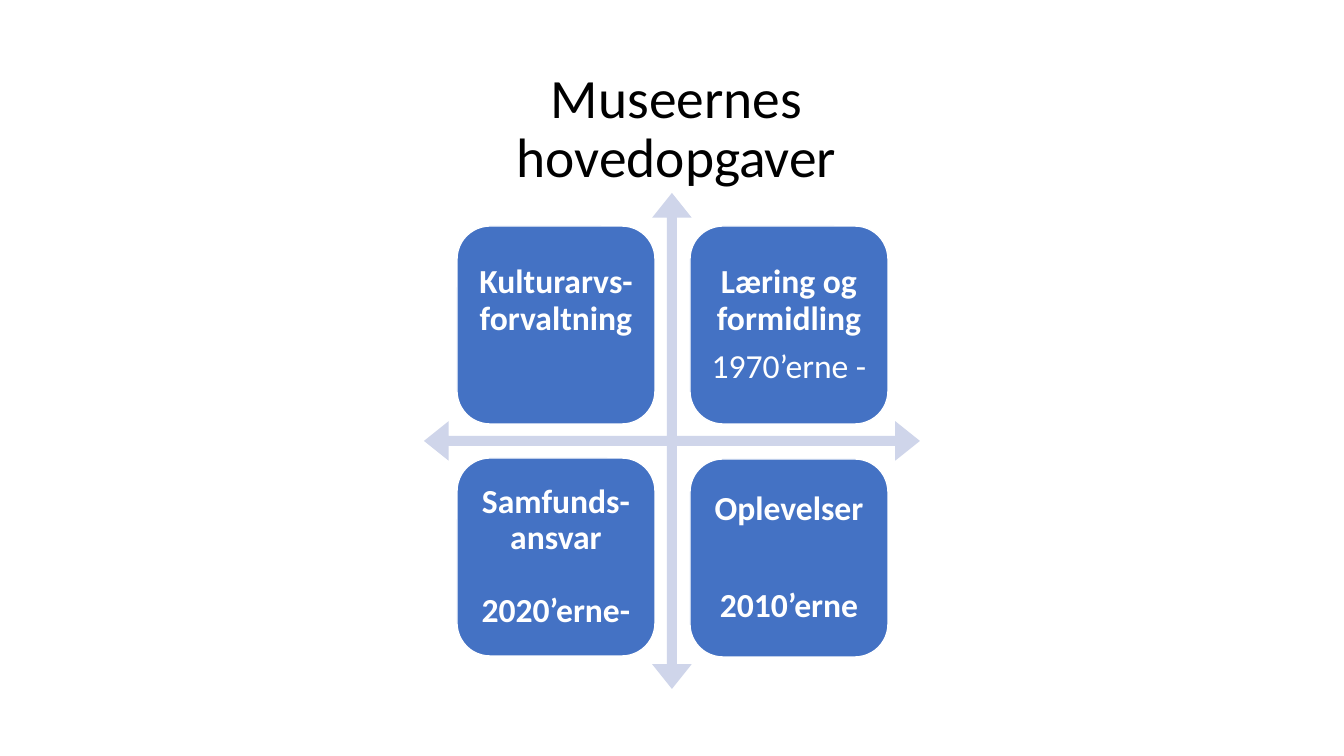
from dataclasses import dataclass

import pptx
import pptx.dml.color
import pptx.enum.shapes
import pptx.enum.text
import pptx.shapes.group
import pptx.slide
import pptx.text.text
import pptx.util

SLIDE_WIDTH, SLIDE_HEIGHT = 1344, 756
EMU_PER_PX = 12192000 / SLIDE_WIDTH


@dataclass(frozen=True)
class Theme:
    font: str = "Calibri"
    title_size: float = 39.6
    task_size: float = 24
    line_spacing: float = 0.9
    title: str = "000000"
    axes: str = "CFD5EA"
    card: str = "4472C4"
    card_text: str = "FFFFFF"


@dataclass(frozen=True)
class Line:
    text: str
    space_before: float = 0
    bold: bool = True


@dataclass(frozen=True)
class Task:
    left: int
    top: int
    lines: tuple[Line, ...]
    bottom_inset: int = 10


THEME = Theme()
CARD_SIZE = 198
CARD_INSET = 10
LEFT_COLUMN, RIGHT_COLUMN = 457, 690
TASKS = (
    Task(LEFT_COLUMN, 226, (Line("Kulturarvs-forvaltning"),), bottom_inset=58),
    Task(RIGHT_COLUMN, 226,
         (Line("Læring og formidling"), Line("1970’erne -", 8.4, bold=False))),
    Task(LEFT_COLUMN, 458,
         (Line("Samfunds-"), Line("ansvar"), Line("2020’erne-", 26.4))),
    Task(RIGHT_COLUMN, 459, (Line("Oplevelser"), Line("2010’erne", 43.2))),
)


def px(length: int) -> pptx.util.Emu:
    return pptx.util.Emu(round(length * EMU_PER_PX))


def rgb(colour: str) -> pptx.dml.color.RGBColor:
    return pptx.dml.color.RGBColor.from_string(colour)


def write_line(paragraph: pptx.text.text._Paragraph, line: Line,
               size: float, colour: str) -> None:
    paragraph.alignment = pptx.enum.text.PP_ALIGN.CENTER
    paragraph.line_spacing = THEME.line_spacing
    paragraph.space_before = pptx.util.Pt(line.space_before)
    run = paragraph.add_run()
    run.text = line.text
    run.font.name = THEME.font
    run.font.size = pptx.util.Pt(size)
    run.font.bold = line.bold
    run.font.color.rgb = rgb(colour)


def draw_title(slide: pptx.slide.Slide) -> None:
    heading = slide.shapes.title
    heading.left, heading.top = px(426), px(101)
    heading.width, heading.height = px(501), px(58)
    frame = heading.text_frame
    frame.word_wrap = True
    frame.auto_size = pptx.enum.text.MSO_AUTO_SIZE.NONE
    frame.vertical_anchor = pptx.enum.text.MSO_ANCHOR.MIDDLE
    write_line(frame.paragraphs[0], Line("Museernes hovedopgaver", bold=False),
               THEME.title_size, THEME.title)


def draw_axes(matrix: pptx.shapes.group.GroupShape) -> None:
    axes = matrix.shapes.add_shape(
        pptx.enum.shapes.MSO_SHAPE.QUAD_ARROW, px(424), px(193), px(496), px(496))
    for index, share in enumerate((0.02, 0.04, 0.05)):
        axes.adjustments[index] = share
    axes.shadow.inherit = False
    axes.fill.solid()
    axes.fill.fore_color.rgb = rgb(THEME.axes)
    axes.line.fill.background()


def draw_task(matrix: pptx.shapes.group.GroupShape, task: Task) -> None:
    card = matrix.shapes.add_shape(
        pptx.enum.shapes.MSO_SHAPE.ROUNDED_RECTANGLE,
        px(task.left), px(task.top), px(CARD_SIZE), px(CARD_SIZE))
    card.shadow.inherit = False
    card.fill.solid()
    card.fill.fore_color.rgb = rgb(THEME.card)
    card.line.color.rgb = rgb(THEME.card_text)
    card.line.width = pptx.util.Pt(1)

    frame = card.text_frame
    frame.word_wrap = True
    frame.vertical_anchor = pptx.enum.text.MSO_ANCHOR.MIDDLE
    frame.margin_left = frame.margin_right = frame.margin_top = px(CARD_INSET)
    frame.margin_bottom = px(task.bottom_inset)
    for index, line in enumerate(task.lines):
        paragraph = frame.add_paragraph() if index else frame.paragraphs[0]
        write_line(paragraph, line, THEME.task_size, THEME.card_text)


def main() -> None:
    deck = pptx.Presentation()
    deck.slide_width, deck.slide_height = px(SLIDE_WIDTH), px(SLIDE_HEIGHT)
    slide = deck.slides.add_slide(deck.slide_layouts.get_by_name("Title Only"))
    draw_title(slide)

    # Matrix of the four main tasks
    matrix = slide.shapes.add_group_shape()
    draw_axes(matrix)
    for task in TASKS:
        draw_task(matrix, task)

    deck.save("out.pptx")


if __name__ == "__main__":
    main()
